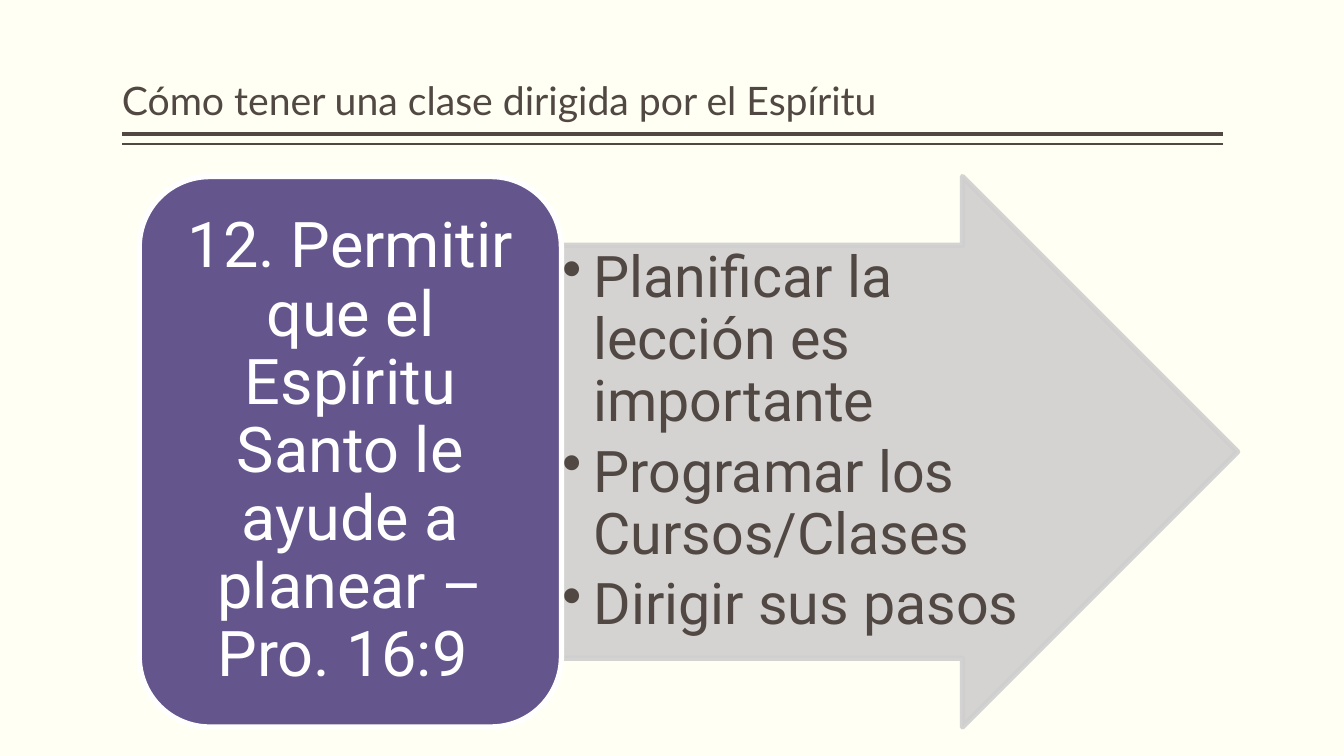
from lxml import etree
from pptx import Presentation
from pptx import util as u
from pptx.dml.color import RGBColor
from pptx.enum import shapes, text
from pptx.oxml import ns

COLOURS = {
    "paper": "FFFFF3",
    "ink": "514843",
    "arrow": "D0CFCF",
    "purple": "64558D",
    "white": "FFFFFF",
}
LEFT, RIGHT = u.Cm(3.07), u.Cm(30.81)
BODY_TOP, BODY_HEIGHT = u.Cm(4.45), u.Cm(13.87)
TITLE = "Cómo tener una clase dirigida por el Espíritu"
STEP = "12. Permitir que el Espíritu Santo le ayude a planear – Pro. 16:9 "
POINTS = [
    "Planificar la lección es importante",
    "Programar los Cursos/Clases",
    "Dirigir sus pasos",
]


def colour(name):
    return RGBColor.from_string(COLOURS[name])


def set_frame(frame, anchor, side, edge):
    frame.word_wrap = True
    frame.auto_size = text.MSO_AUTO_SIZE.NONE
    frame.vertical_anchor = anchor
    frame.margin_left = frame.margin_right = u.Cm(side)
    frame.margin_top = frame.margin_bottom = u.Cm(edge)


def write(para, words, font, size, ink, align, after=0):
    para.alignment = align
    para.line_spacing = 0.9
    para.space_before = u.Pt(0)
    para.space_after = u.Pt(after)
    span = para.add_run()
    span.text = words
    span.font.name = font
    span.font.size = u.Pt(size)
    span.font.color.rgb = colour(ink)


def add_bullet(para, indent):
    props = para._p.get_or_add_pPr()
    props.set("marL", str(indent))
    props.set("indent", str(-indent))
    etree.SubElement(props, ns.qn("a:buChar"), char="•")


def make_translucent(fill_format, percent):
    """Give a solid fill, of a shape or of its line, an opacity in percent."""
    tint = fill_format._xPr.find(ns.qn("a:solidFill"))[0]
    etree.SubElement(tint, ns.qn("a:alpha"), val=str(percent * 1000))


def add_rule(page, top, width):
    rule = page.shapes.add_connector(
        shapes.MSO_CONNECTOR.STRAIGHT, RIGHT, top, LEFT, top)
    rule.line.color.rgb = colour("ink")
    rule.line.width = u.Pt(width)
    etree.SubElement(rule._element.spPr, ns.qn("a:effectLst"))


def add_block(page, kind, left, width, fill, outline):
    block = page.shapes.add_shape(kind, left, BODY_TOP, width, BODY_HEIGHT)
    block.shadow.inherit = False
    block.fill.solid()
    block.fill.fore_color.rgb = colour(fill)
    block.line.color.rgb = colour(outline)
    block.line.width = u.Pt(3.78)
    return block


def add_title(page):
    title = page.shapes.title
    title.left, title.top = LEFT, u.Cm(0.2)
    title.width, title.height = RIGHT - LEFT, u.Cm(3.05)
    set_frame(title.text_frame, text.MSO_ANCHOR.BOTTOM, 0, 0.13)
    write(title.text_frame.paragraphs[0], TITLE, "Lato", 28, "ink",
          text.PP_ALIGN.LEFT)


def add_points_arrow(page):
    arrow = add_block(page, shapes.MSO_SHAPE.RIGHT_ARROW,
                      u.Cm(14.1), u.Cm(17.09), "arrow", "arrow")
    arrow.adjustments[0] = 0.75
    arrow.adjustments[1] = 0.5
    make_translucent(arrow.fill, 90)
    make_translucent(arrow.line.fill, 90)
    frame = arrow.text_frame
    set_frame(frame, text.MSO_ANCHOR.TOP, 0.07, 0.07)
    for index, point in enumerate(POINTS):
        para = frame.add_paragraph() if index else frame.paragraphs[0]
        para.level = 1
        write(para, point, "Roboto", 41, "ink", text.PP_ALIGN.LEFT, after=6)
        add_bullet(para, u.Cm(0.79))


def add_step_box(page):
    box = add_block(page, shapes.MSO_SHAPE.ROUNDED_RECTANGLE,
                    u.Cm(3.51), u.Cm(10.64), "purple", "white")
    set_frame(box.text_frame, text.MSO_ANCHOR.MIDDLE, 0.48, 0.24)
    write(box.text_frame.paragraphs[0], STEP, "Roboto", 45, "white",
          text.PP_ALIGN.CENTER)


def main():
    deck = Presentation()
    deck.slide_width, deck.slide_height = u.Cm(33.87), u.Cm(19.05)
    page = deck.slides.add_slide(deck.slide_layouts[5])
    page.background.fill.solid()
    page.background.fill.fore_color.rgb = colour("paper")
    add_rule(page, u.Cm(3.38), 3)
    add_rule(page, u.Cm(3.63), 1)
    add_title(page)
    add_points_arrow(page)
    add_step_box(page)
    deck.save("out.pptx")


if __name__ == "__main__":
    main()
